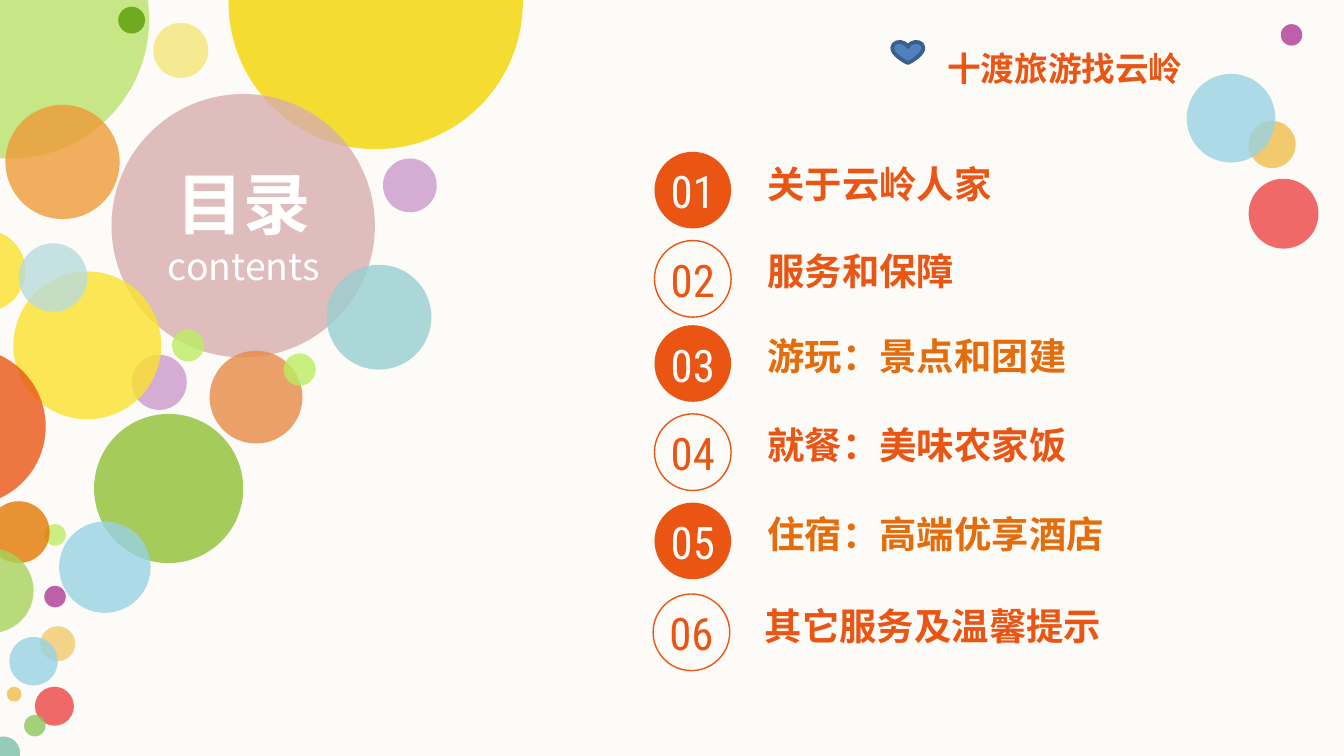
"""Build a contents slide with a cluster of coloured bubbles and six numbered entries."""
from lxml.etree import SubElement
from pptx import Presentation
from pptx.dml.color import RGBColor
from pptx.enum.shapes import MSO_SHAPE
from pptx.enum.text import MSO_AUTO_SIZE, PP_ALIGN
from pptx.oxml.ns import qn
from pptx.util import Inches, Pt

COLOURS = {
    "paper": "FCFBF7", "white": "FFFFFF", "flame": "EA5514", "orange": "E46C0A",
    "heart": "4F81BD", "heart edge": "3A5F8C", "lime": "BAE36B", "leaf": "6EAB1F",
    "apricot": "ED9B38", "cream": "F5EA91", "yellow": "F4D500", "rose": "D8AEAF",
    "teal": "99CED2", "lilac": "CB99CC", "copper": "E78A47", "olive": "A5CB5A",
    "bright lime": "BDED63", "lemon": "FBE22D", "purple": "B03896", "sand": "F0CA6C",
    "jade": "7BBFAA", "red": "EB4544", "grass": "8DC65B", "sky": "98D2E3",
    "mist": "B9DBDD", "amber": "E27902", "moss": "A9D25A",
}
CJK_FONT = "Noto Sans CJK SC"
NUMBER_FONT = "Roboto Condensed"
LABEL_FONT = "Calibri"

LEFT_BUBBLES = [
    (-0.96, -0.89, 2.07, "lime", 80), (0.88, 0.05, 0.2, "leaf", 100),
    (0.04, 0.78, 0.85, "apricot", 80), (1.14, 0.17, 0.41, "cream", 100),
    (1.7, -1.08, 2.19, "yellow", 80), (0.83, 0.7, 1.96, "rose", 80),
    (2.43, 1.97, 0.78, "teal", 80), (2.85, 1.18, 0.4, "lilac", 80),
    (1.56, 2.61, 0.69, "copper", 80), (0.7, 3.08, 1.11, "olive", 100),
    (2.11, 2.63, 0.24, "bright lime", 80), (1.28, 2.45, 0.24, "bright lime", 80),
    (0.98, 2.64, 0.41, "lilac", 80), (0.1, 2.02, 1.1, "lemon", 80),
    (-0.42, 1.71, 0.61, "lemon", 80), (0.33, 3.9, 0.16, "bright lime", 80),
    (0.33, 4.36, 0.16, "purple", 80), (0.3, 4.66, 0.26, "sand", 80),
    (0.05, 5.11, 0.11, "sand", 100), (-0.1, 5.48, 0.25, "jade", 80),
    (0.26, 5.11, 0.29, "red", 80), (0.18, 5.32, 0.16, "grass", 80),
    (0.07, 4.74, 0.36, "sky", 80), (0.14, 1.81, 0.51, "mist", 80),
    (0.44, 3.88, 0.68, "sky", 80), (-0.09, 3.73, 0.46, "amber", 80),
    (-0.38, 4.08, 0.63, "moss", 80), (-0.83, 2.59, 1.17, "flame", 80),
]
RIGHT_BUBBLES = [
    (9.53, 0.18, 0.16, "purple", 80), (9.29, 0.9, 0.35, "sand", 100),
    (9.29, 1.33, 0.52, "red", 80), (8.83, 0.55, 0.66, "sky", 80),
]
ENTRIES = [
    (4.87, 1.13, 5.71, 1.2, 2.13, "关于云岭人家", NUMBER_FONT, "flame"),
    (4.87, 1.79, 5.71, 1.85, 2.13, "服务和保障", NUMBER_FONT, "flame"),
    (4.87, 2.42, 5.71, 2.48, 2.91, "游玩：景点和团建", LABEL_FONT, "orange"),
    (4.87, 3.08, 5.71, 3.14, 2.36, "就餐：美味农家饭", LABEL_FONT, "flame"),
    (4.87, 3.74, 5.71, 3.8, 3.12, "住宿：高端优享酒店", LABEL_FONT, "orange"),
    (4.86, 4.42, 5.69, 4.49, 2.77, "其它服务及温馨提示", LABEL_FONT, "flame"),
]


class ContentsSlide:
    def __init__(self, presentation):
        self.slide = presentation.slides.add_slide(presentation.slide_layouts[6])
        background = self.slide.background.fill
        background.solid()
        background.fore_color.rgb = self.colour("paper")

    def colour(self, name):
        return RGBColor.from_string(COLOURS[name])

    def shape(self, kind, left, top, width, height, fill=None, opacity=100, line=None, weight=0.75):
        shape = self.slide.shapes.add_shape(
            kind, Inches(left), Inches(top), Inches(width), Inches(height))
        shape.shadow.inherit = False
        if fill:
            shape.fill.solid()
            shape.fill.fore_color.rgb = self.colour(fill)
            if opacity < 100:
                colour = shape.fill._xPr.find(qn("a:solidFill"))[0]
                SubElement(colour, qn("a:alpha"), val=str(opacity * 1000))
        else:
            shape.fill.background()
        if line:
            shape.line.color.rgb = self.colour(line)
            shape.line.width = Pt(weight)
        else:
            shape.line.fill.background()

    def circle(self, left, top, size, fill=None, opacity=100, line=None):
        self.shape(MSO_SHAPE.OVAL, left, top, size, size, fill, opacity, line)

    def text(self, left, top, width, height, lines, font, colour, align=PP_ALIGN.LEFT,
             inset=True, wrap=True):
        box = self.slide.shapes.add_textbox(
            Inches(left), Inches(top), Inches(width), Inches(height))
        frame = box.text_frame
        frame.word_wrap = wrap
        frame.auto_size = MSO_AUTO_SIZE.SHAPE_TO_FIT_TEXT
        if not inset:
            frame.margin_left = frame.margin_right = Inches(0)
            frame.margin_top = frame.margin_bottom = Inches(0)
        frame.text = "\n".join(words for words, size, bold in lines)
        for paragraph, (words, size, bold) in zip(frame.paragraphs, lines):
            paragraph.alignment = align
            run = paragraph.runs[0]
            run.font.name = font
            run.font.size = Pt(size)
            run.font.bold = bold
            run.font.color.rgb = self.colour(colour)
            SubElement(run._r.get_or_add_rPr(), qn("a:ea"), typeface=CJK_FONT)

    def entry(self, number, left, top, label_left, label_top, width, label, font, colour):
        filled = number % 2 == 1
        if filled:
            self.circle(left, top, 0.57, fill="flame")
        else:
            self.circle(left, top, 0.57, line="flame")
        self.text(left, top + 0.09, 0.57, 0.4, [(f"{number:02d}", 24, False)], NUMBER_FONT,
                  "paper" if filled else "flame", PP_ALIGN.CENTER, inset=False)
        self.text(label_left, label_top, width, 0.34, [(label, 20, True)], font, colour,
                  inset=False)


def main():
    presentation = Presentation()
    presentation.slide_width = Inches(10)
    presentation.slide_height = Inches(10 * 9 / 16)
    contents = ContentsSlide(presentation)
    for bubble in LEFT_BUBBLES:
        contents.circle(*bubble)
    contents.text(1.06, 1.21, 1.51, 0.94, [("目录", 36, True), ("contents", 20, False)],
                  CJK_FONT, "white", PP_ALIGN.CENTER, inset=False)
    for number, entry in enumerate(ENTRIES, start=1):
        contents.entry(number, *entry)
    for bubble in RIGHT_BUBBLES:
        contents.circle(*bubble)
    contents.text(6.95, 0.31, 2.03, 0.4, [("十渡旅游找云岭", 18, True)], LABEL_FONT, "flame",
                  wrap=False)
    contents.shape(MSO_SHAPE.HEART, 6.64, 0.31, 0.23, 0.16, "heart",
                   line="heart edge", weight=2)
    presentation.save("out.pptx")


if __name__ == "__main__":
    main()
